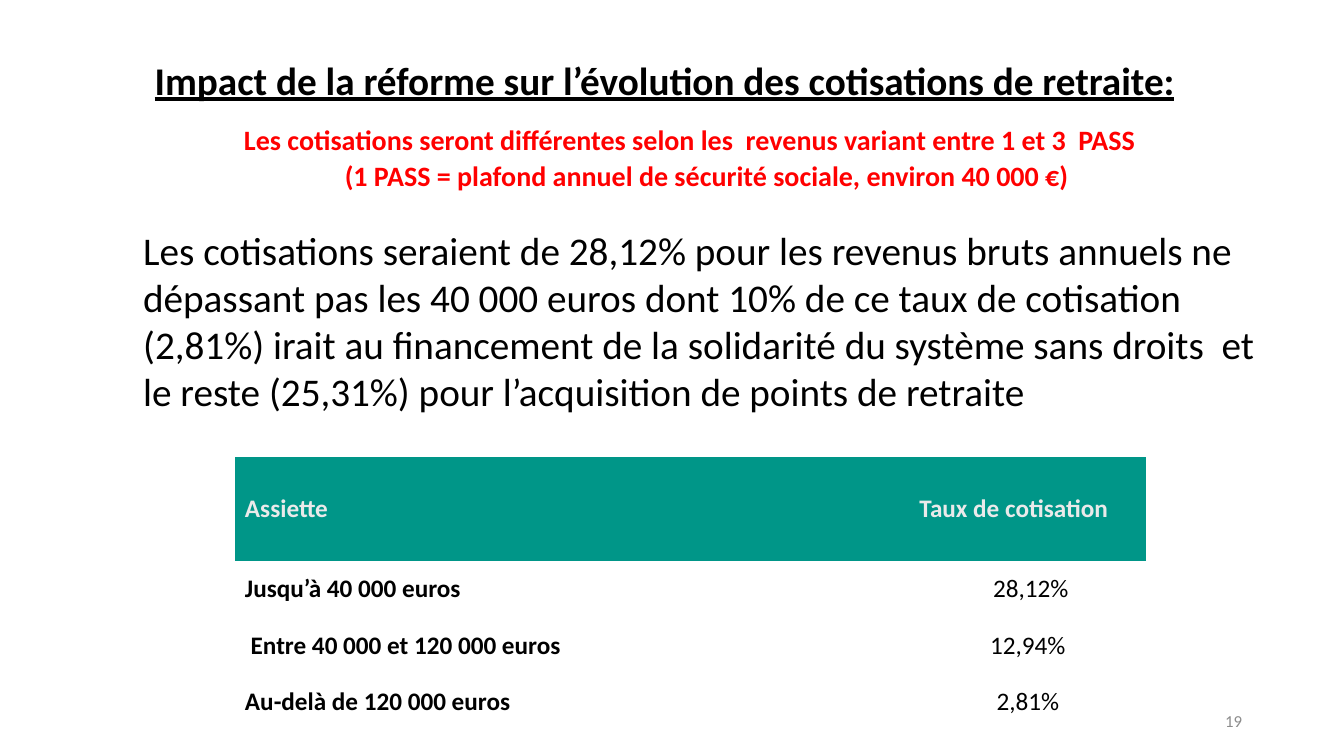
from lxml.etree import SubElement
from pptx import Presentation
from pptx.dml.color import RGBColor
from pptx.enum.text import MSO_ANCHOR, MSO_AUTO_SIZE, PP_ALIGN
from pptx.oxml.ns import qn
from pptx.util import Inches, Pt

WIDE, HIGH = Inches(13.33), Inches(7.5)
BLACK = RGBColor(0x00, 0x00, 0x00)
RED = RGBColor(0xFF, 0x00, 0x00)
TEAL = RGBColor(0x00, 0x96, 0x88)
PALE = RGBColor(0xEA, 0xEA, 0xEA)
GREY = RGBColor(0x8C, 0x8C, 0x8C)
PLAIN = "{2D5ABB26-0587-4C30-8999-92F81FD0307C}"

RATES = [
    ("Assiette", "Taux de cotisation"),
    ("Jusqu’à 40 000 euros", " 28,12%"),
    (" Entre 40 000 et 120 000 euros", "12,94%"),
    ("Au-delà de 120 000 euros", "2,81%"),
]
LINES = [
    ("Les cotisations seront différentes selon les  revenus variant entre 1 et 3  PASS",
     dict(size=20, color=RED, bold=True, indent=7.5)),
    ("(1 PASS = plafond annuel de sécurité sociale, environ 40 000 €)",
     dict(size=20, color=RED, bold=True, indent=15, before=2)),
    ("Les cotisations seraient de 28,12% pour les revenus bruts annuels ne dépassant "
     "pas les 40 000 euros dont 10% de ce taux de cotisation (2,81%) irait au "
     "financement de la solidarité du système sans droits  et le reste (25,31%) pour "
     "l’acquisition de points de retraite", dict(size=28, before=24.4)),
]


def area(x, y, w, h):
    """Turn percentages of the slide into a box of lengths."""
    return [int(part * side / 100) for part, side in zip((x, y, w, h), (WIDE, HIGH) * 2)]


def write(para, text, size=18, color=BLACK, bold=False, line=False,
          align=PP_ALIGN.LEFT, before=0, indent=None):
    """Fill a paragraph with formatted text."""
    if indent is not None:
        props = para._p.get_or_add_pPr()
        props.set("marL", str(int(indent * WIDE / 100)))
        props.set("indent", "0")
        SubElement(props, qn("a:buNone"))
    para.alignment = align
    para.space_before = Pt(before)
    run = para.add_run()
    run.text = text
    font = run.font
    font.name, font.size, font.bold, font.underline = "Calibri", Pt(size), bold, line
    font.color.rgb = color


def place(shape, box, anchor):
    """Move a text shape into its box and return its frame."""
    shape.left, shape.top, shape.width, shape.height = box
    frame = shape.text_frame
    frame.word_wrap = True
    frame.auto_size = MSO_AUTO_SIZE.NONE
    frame.vertical_anchor = anchor
    return frame


def head(slide, box):
    """Write the underlined title."""
    frame = place(slide.shapes.title, box, MSO_ANCHOR.MIDDLE)
    write(frame.paragraphs[0], "Impact de la réforme sur l’évolution des cotisations de retraite:",
          size=28, bold=True, line=True, align=PP_ALIGN.CENTER)


def body(slide, box):
    """Write the red notice and the main paragraph."""
    frame = place(slide.placeholders[1], box, MSO_ANCHOR.TOP)
    for num, (text, style) in enumerate(LINES):
        para = frame.add_paragraph() if num else frame.paragraphs[0]
        write(para, text, **{"indent": 0, **style})


def rates(slide, box):
    """Draw the table of contribution rates."""
    left, top, width, height = box
    table = slide.shapes.add_table(len(RATES), 2, *box).table
    table.first_row = table.horz_banding = False
    table._tbl.tblPr.find(qn("a:tableStyleId")).text = PLAIN
    for col, share in zip(table.columns, (0.74, 0.26)):
        col.width = int(width * share)
    first = int(height * 0.38)
    for num, (row, words) in enumerate(zip(table.rows, RATES)):
        row.height = (height - first) // (len(RATES) - 1) if num else first
        for side, (cell, text) in enumerate(zip(row.cells, words)):
            cell.vertical_anchor = MSO_ANCHOR.MIDDLE
            if num:
                cell.fill.background()
            else:
                cell.fill.solid()
                cell.fill.fore_color.rgb = TEAL
            write(cell.text_frame.paragraphs[0], text, color=BLACK if num else PALE,
                  bold=not (num and side),
                  align=PP_ALIGN.CENTER if num and side else PP_ALIGN.LEFT)


def page(slide, box):
    """Write the page number."""
    frame = place(slide.shapes.add_textbox(*box), box, MSO_ANCHOR.MIDDLE)
    write(frame.paragraphs[0], "19", size=12, color=GREY, align=PP_ALIGN.RIGHT)


def main():
    """Build the slide and save it."""
    deck = Presentation()
    deck.slide_width, deck.slide_height = WIDE, HIGH
    slide = deck.slides.add_slide(deck.slide_layouts[1])
    rates(slide, area(17.48, 60.4, 67.82, 36.27))
    body(slide, area(9.9, 15.47, 84.55, 40.27))
    head(slide, area(8.63, 7, 81.62, 7.07))
    page(slide, area(70.67, 92.67, 22.5, 5.33))
    deck.save("out.pptx")


if __name__ == "__main__":
    main()
